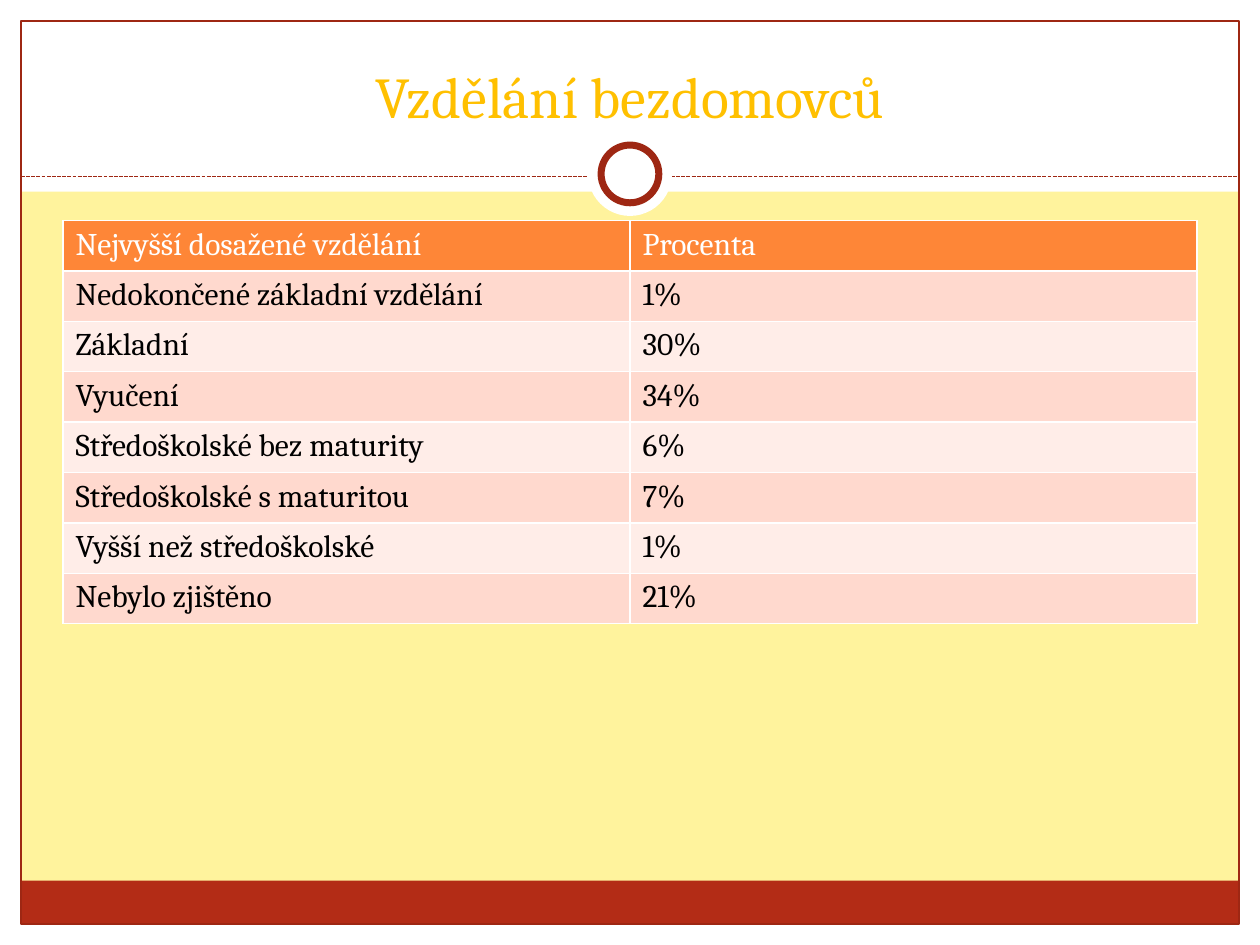
from dataclasses import dataclass

from lxml import etree
from pptx import Presentation
from pptx.dml.color import RGBColor
from pptx.enum.dml import MSO_LINE
from pptx.enum.shapes import MSO_CONNECTOR, MSO_SHAPE
from pptx.enum.text import MSO_ANCHOR, MSO_AUTO_SIZE, PP_ALIGN
from pptx.oxml.ns import qn
from pptx.util import Pt

RECTANGLE, OVAL = MSO_SHAPE.RECTANGLE, MSO_SHAPE.OVAL
STRAIGHT = MSO_CONNECTOR.STRAIGHT
DASHED = MSO_LINE.SQUARE_DOT
CENTER, BOTTOM = PP_ALIGN.CENTER, MSO_ANCHOR.BOTTOM
NO_AUTOFIT = MSO_AUTO_SIZE.NONE
TITLE_ONLY_LAYOUT = 5

WIDTH, HEIGHT = 720, 540
MARGIN = 12
HEADER_HEIGHT = 109.5
FOOTER_TOP = 503.25
DIVIDER_TOP = 100.8
MEDALLION_CENTER = 99.4

EDUCATION_ROWS = [
    ("Nejvyšší dosažené vzdělání", "Procenta"),
    ("Nedokončené základní vzdělání", "1%"),
    ("Základní", "30%"),
    ("Vyučení", "34%"),
    ("Středoškolské bez maturity", "6%"),
    ("Středoškolské s maturitou", "7%"),
    ("Vyšší než středoškolské", "1%"),
    ("Nebylo zjištěno", "21%"),
]


@dataclass(frozen=True)
class Theme:
    font: str = "Cambria"
    title_size: float = 33
    table_size: float = 18
    background: str = "FFF39D"
    white: str = "FFFFFF"
    black: str = "000000"
    footer: str = "B32C16"
    outline: str = "9E2713"
    title: str = "FFC000"
    table_header: str = "FE8637"
    bands: tuple = ("FFD9CE", "FFEDE8")


def set_fill(fill, color):
    fill.solid()
    fill.fore_color.rgb = RGBColor.from_string(color)


class SlideBuilder:
    def __init__(self, slide, theme):
        self.slide = slide
        self.theme = theme

    def background(self):
        set_fill(self.slide.background.fill, self.theme.background)

    def style_paragraph(self, paragraph, size, color):
        font = paragraph.font
        font.name, font.size, font.bold = self.theme.font, Pt(size), False
        font.color.rgb = RGBColor.from_string(color)

    def shape(self, kind, left, top, width, height, fill=None, line=None, line_width=0.75):
        shape = self.slide.shapes.add_shape(kind, Pt(left), Pt(top), Pt(width), Pt(height))
        shape.shadow.inherit = False
        if fill:
            set_fill(shape.fill, fill)
        else:
            shape.fill.background()
        if line:
            set_fill(shape.line.fill, line)
            shape.line.width = Pt(line_width)
        else:
            shape.line.fill.background()

    def circle(self, center_x, center_y, diameter, **style):
        radius = diameter / 2
        self.shape(OVAL, center_x - radius, center_y - radius, diameter, diameter, **style)

    def dashed_line(self, left, right, top):
        line = self.slide.shapes.add_connector(STRAIGHT, Pt(left), Pt(top), Pt(right), Pt(top))
        set_fill(line.line.fill, self.theme.outline)
        line.line.width = Pt(0.75)
        line.line.dash_style = DASHED
        etree.SubElement(line._element.spPr, qn("a:effectLst"))

    def title(self, text, left, top, width, height):
        """Fill the title placeholder and bring it in front of the shapes drawn so far."""
        title = self.slide.shapes.title
        title.left, title.top, title.width, title.height = map(Pt, (left, top, width, height))
        frame = title.text_frame
        frame.text = text
        frame.word_wrap = True
        frame.auto_size = NO_AUTOFIT
        frame.vertical_anchor = BOTTOM
        paragraph = frame.paragraphs[0]
        paragraph.alignment = CENTER
        self.style_paragraph(paragraph, self.theme.title_size, self.theme.title)
        self.slide.shapes._spTree.append(title._element)

    def cell_borders(self, cell):
        """Draw all four sides; border elements must precede the fill of the cell."""
        properties = cell._tc.get_or_add_tcPr()
        for position, side in enumerate(("a:lnL", "a:lnR", "a:lnT", "a:lnB")):
            border = etree.Element(qn(side), w=str(Pt(1)))
            solid = etree.SubElement(border, qn("a:solidFill"))
            etree.SubElement(solid, qn("a:srgbClr"), val=self.theme.white)
            properties.insert(position, border)

    def table(self, rows, left, top, width, row_height):
        theme = self.theme
        table = self.slide.shapes.add_table(
            len(rows), len(rows[0]), Pt(left), Pt(top), Pt(width), Pt(row_height * len(rows))
        ).table
        for row_index, values in enumerate(rows):
            is_header = row_index == 0
            fill = theme.table_header if is_header else theme.bands[(row_index - 1) % 2]
            color = theme.white if is_header else theme.black
            for column_index, value in enumerate(values):
                cell = table.cell(row_index, column_index)
                cell.text = value
                set_fill(cell.fill, fill)
                self.cell_borders(cell)
                self.style_paragraph(cell.text_frame.paragraphs[0], theme.table_size, color)


def main():
    presentation = Presentation()
    presentation.slide_width, presentation.slide_height = Pt(WIDTH), Pt(HEIGHT)
    slide = presentation.slides.add_slide(presentation.slide_layouts[TITLE_ONLY_LAYOUT])
    theme = Theme()
    builder = SlideBuilder(slide, theme)
    builder.background()

    right, bottom = WIDTH - MARGIN, HEIGHT - MARGIN
    inner_width = right - MARGIN
    for area in (
        (0, bottom, WIDTH, MARGIN),
        (0, 0, WIDTH, HEADER_HEIGHT),
        (0, 0, MARGIN, HEIGHT),
        (right, 0, MARGIN, HEIGHT),
    ):
        builder.shape(RECTANGLE, *area, fill=theme.white)
    builder.shape(RECTANGLE, MARGIN, FOOTER_TOP, inner_width, bottom - FOOTER_TOP, fill=theme.footer)
    builder.shape(RECTANGLE, MARGIN, MARGIN, inner_width, bottom - MARGIN, line=theme.outline)
    builder.dashed_line(MARGIN, right, DIVIDER_TOP)
    builder.circle(WIDTH / 2, MEDALLION_CENTER, 48, fill=theme.white)
    builder.circle(
        WIDTH / 2, MEDALLION_CENTER, 33, fill=theme.white, line=theme.outline, line_width=4
    )

    builder.title("Vzdělání bezdomovců", 24, 18, 672, 60)
    builder.table(EDUCATION_ROWS, 36, 126, 648, 28.8)
    presentation.save("out.pptx")


if __name__ == "__main__":
    main()
